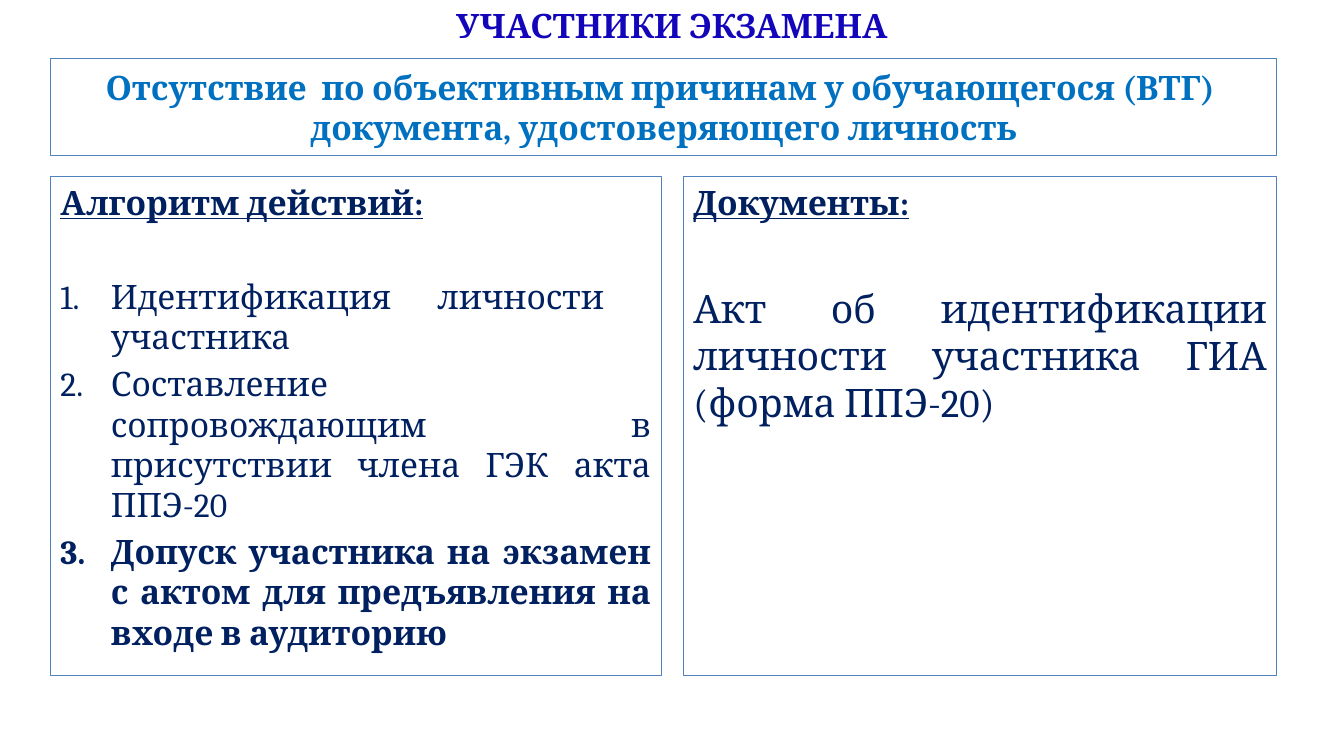
"""Build the slide on exam participants without an identity document."""
from lxml import etree
from pptx import Presentation
from pptx.dml.color import RGBColor
from pptx.enum.text import MSO_ANCHOR, MSO_AUTO_SIZE, PP_ALIGN
from pptx.oxml.ns import qn
from pptx.util import Cm, Pt

LEFT, CENTER, JUSTIFY = PP_ALIGN.LEFT, PP_ALIGN.CENTER, PP_ALIGN.JUSTIFY
TOP, MIDDLE = MSO_ANCHOR.TOP, MSO_ANCHOR.MIDDLE
NO_FIT = MSO_AUTO_SIZE.NONE
TWO_CONTENT = 3
FONT = "Cambria"
COLORS = {
    "border": "4F81BD",
    "subject": "0070C0",
    "body": "002060",
    "header": "1306BA",
}
SLIDE_WIDTH, SLIDE_HEIGHT = 33.87, 19.05
MARGIN = 1.27
PANEL_TOP, PANEL_HEIGHT = 4.45, 12.57
STEPS = [
    ("Идентификация личности  участника", False),
    ("Составление сопровождающим в присутствии члена ГЭК акта ППЭ-20", False),
    ("Допуск участника на экзамен с актом для предъявления на входе в аудиторию", True),
]


def color(name):
    """Return the named colour."""
    return RGBColor.from_string(COLORS[name])


def place(box, left, top, width, height, anchor):
    """Move a box and prepare its text frame."""
    box.left, box.top, box.width, box.height = map(Cm, (left, top, width, height))
    frame = box.text_frame
    frame.word_wrap = True
    frame.auto_size = NO_FIT
    frame.vertical_anchor = anchor


def outline(box):
    """Give a box the thin blue border."""
    box.line.color.rgb = color("border")
    box.line.width = Pt(0.75)


def set_marker(para, numbered):
    """Number a paragraph with a hanging indent, or remove its bullet."""
    indent = Cm(MARGIN) if numbered else 0
    properties = para._p.get_or_add_pPr()
    properties.set("marL", str(indent))
    properties.set("indent", str(-indent))
    if numbered:
        etree.SubElement(properties, qn("a:buFont"), typeface=FONT)
        etree.SubElement(properties, qn("a:buAutoNum"), type="arabicPeriod")
    else:
        etree.SubElement(properties, qn("a:buNone"))


def write(para, text, color_name, align, size=24, bold=True, underline=False,
          before=0, numbered=False):
    """Fill and format one paragraph."""
    para.text = text
    para.alignment = align
    para.space_before = Pt(before)
    set_marker(para, numbered)
    font = para.font
    font.name, font.size = FONT, Pt(size)
    font.bold, font.underline = bold, underline
    font.color.rgb = color(color_name)


def add_header(page):
    """Add the heading across the top of the page."""
    box = page.shapes.add_textbox(0, 0, 0, 0)
    place(box, 0, 0, SLIDE_WIDTH, 1.45, TOP)
    write(box.text_frame.paragraphs[0], "УЧАСТНИКИ ЭКЗАМЕНА", "header", CENTER)


def fill_title(box):
    """Write the situation into the title placeholder."""
    place(box, MARGIN, 1.47, SLIDE_WIDTH - 2 * MARGIN - 0.42, 2.46, MIDDLE)
    outline(box)
    write(box.text_frame.paragraphs[0],
          "Отсутствие  по объективным причинам у обучающегося (ВТГ) \v"
          "документа, удостоверяющего личность", "subject", CENTER)


def fill_panel(box, left, width, heading):
    """Frame a body placeholder and write its underlined heading."""
    place(box, left, PANEL_TOP, width, PANEL_HEIGHT, TOP)
    outline(box)
    write(box.text_frame.paragraphs[0], heading, "body", LEFT,
          underline=True, before=4.8)


def fill_steps(box):
    """Write the numbered list of actions."""
    fill_panel(box, MARGIN, 15.39, "Алгоритм действий:")
    for index, (step, bold) in enumerate(STEPS):
        write(box.text_frame.add_paragraph(), step, "body", JUSTIFY, bold=bold,
              before=4.8 if index else 38.4, numbered=True)


def fill_documents(box):
    """Write the required document."""
    fill_panel(box, 17.22, 14.96, "Документы:")
    write(box.text_frame.add_paragraph(),
          "Акт об идентификации личности участника ГИА (форма ППЭ-20)",
          "body", JUSTIFY, size=28, bold=False, before=44.5)


def main():
    """Build and save the deck."""
    deck = Presentation()
    deck.slide_width, deck.slide_height = Cm(SLIDE_WIDTH), Cm(SLIDE_HEIGHT)
    page = deck.slides.add_slide(deck.slide_layouts[TWO_CONTENT])
    title, steps, documents = page.placeholders
    fill_title(title)
    fill_steps(steps)
    fill_documents(documents)
    add_header(page)
    deck.save("out.pptx")


if __name__ == "__main__":
    main()
